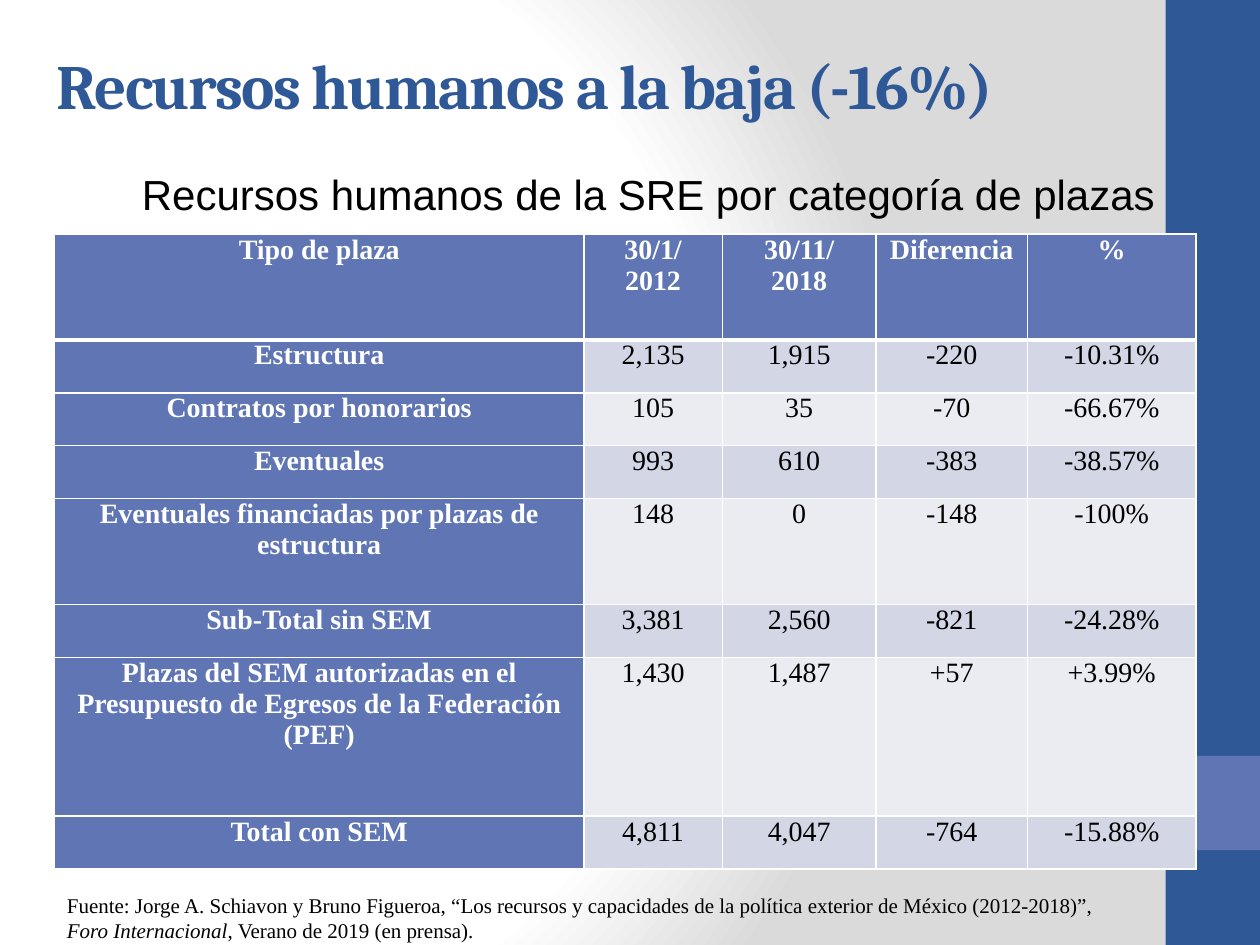
from lxml import etree
from pptx import Presentation
from pptx import util as u
from pptx.dml.color import RGBColor
from pptx.enum import shapes, text
from pptx.oxml import parse_xml
from pptx.oxml.ns import nsdecls, qn

# Content
TITLE = "Recursos humanos a la baja (-16%)"
SUBTITLE = "Recursos humanos de la SRE por categoría de plazas"
HEADER = ["Tipo de plaza", "30/1/\n2012", "30/11/\n2018", "Diferencia", "%"]
ROWS = [
    ("Estructura", "2,135", "1,915", "-220", "-10.31%"),
    ("Contratos por honorarios", "105", "35", "-70", "-66.67%"),
    ("Eventuales", "993", "610", "-383", "-38.57%"),
    ("Eventuales financiadas por plazas de estructura",
     "148", "0", "-148", "-100%"),
    ("Sub-Total sin SEM", "3,381", "2,560", "-821", "-24.28%"),
    ("Plazas del SEM autorizadas en el Presupuesto de Egresos de la "
     "Federación (PEF)", "1,430", "1,487", "+57", "+3.99%"),
    ("Total con SEM", "4,811", "4,047", "-764", "-15.88%"),
]
SOURCE = [
    ("Fuente: Jorge A. Schiavon y Bruno Figueroa, “Los recursos y "
     "capacidades de la política exterior de México (2012-2018)”, ", False),
    ("Foro Internacional", True),
    (", Verano de 2019 (en prensa).", False),
]
COL_WIDTHS = [10.67, 2.79, 3.1, 3.05, 3.4]
ROW_UNITS = [2, 1, 1, 1, 2, 1, 3, 1]
ROW_UNIT = 12.8 / sum(ROW_UNITS)

THEME = {
    "navy": "2F5897", "blue": "6076B4", "bands": ("D2D6E5", "EAECF2"),
    "white": "FFFFFF", "black": "000000", "gray": "DADADA",
    "title": 36, "subtitle": 24, "table": 16, "source": 12,
    "head_font": "Cambria", "sub_font": "Arial",
    "body_font": "Times New Roman",
}


def color(name):
    return RGBColor.from_string(THEME.get(name, name))


def write(tf, content, *, size, font, fill="black", bold=False, align=None,
          anchor=None, spacing=None, line=None, indent=None):
    """Fill a frame with a string (one paragraph per line) or (text, italic) runs."""
    tf.word_wrap = True
    if anchor is not None:
        tf.vertical_anchor = anchor
    if isinstance(content, str):
        paragraphs = [[(t, False)] for t in content.split("\n")]
    else:
        paragraphs = [content]
    for i, runs in enumerate(paragraphs):
        p = tf.add_paragraph() if i else tf.paragraphs[0]
        p.alignment = align
        p.line_spacing = line
        if indent:
            p._p.get_or_add_pPr().set("marL", str(u.Cm(indent)))
        for t, italic in runs:
            r = p.add_run()
            r.text = t
            r.font.size, r.font.name = u.Pt(size), font
            r.font.bold, r.font.italic = bold, italic
            r.font.color.rgb = color(fill)
            if spacing:
                r._r.get_or_add_rPr().set("spc", str(spacing * 100))


def add_text(s, box, content, **fmt):
    sp = s.shapes.add_textbox(*map(u.Cm, box))
    write(sp.text_frame, content, **fmt)


def add_bar(s, box, fill):
    sp = s.shapes.add_shape(shapes.MSO_SHAPE.RECTANGLE, *map(u.Cm, box))
    sp.shadow.inherit = False
    sp.fill.solid()
    sp.fill.fore_color.rgb = color(fill)
    sp.line.fill.background()


def set_borders(cell, **widths):
    tcPr = cell._tc.get_or_add_tcPr()
    for i, side in enumerate("LRTB"):
        ln = etree.Element(qn(f"a:ln{side}"), w=str(u.Pt(widths.get(side, 1))))
        solid = etree.SubElement(ln, qn("a:solidFill"))
        etree.SubElement(solid, qn("a:srgbClr"), val=THEME["white"])
        tcPr.insert(i, ln)


def set_background(s):
    stops = "".join(
        f'<a:gs pos="{pos * 1000}"><a:srgbClr val="{THEME[name]}"/></a:gs>'
        for pos, name in [(0, "white"), (75, "white"), (100, "gray")])
    s._element.cSld.insert(0, parse_xml(
        f'<p:bg {nsdecls("p", "a")}><p:bgPr><a:gradFill rotWithShape="1">'
        f'<a:gsLst>{stops}</a:gsLst><a:path path="circle">'
        '<a:fillToRect l="20000" t="50000" r="100000" b="50000"/></a:path>'
        '</a:gradFill><a:effectLst/></p:bgPr></p:bg>'))


def add_staff_table(s):
    data = [HEADER, *ROWS]
    table = s.shapes.add_table(
        len(data), len(HEADER), u.Cm(1.1), u.Cm(4.72),
        u.Cm(sum(COL_WIDTHS)), u.Cm(ROW_UNIT * sum(ROW_UNITS))).table
    for col, width in zip(table.columns, COL_WIDTHS):
        col.width = u.Cm(width)
    for i, values in enumerate(data):
        table.rows[i].height = u.Cm(ROW_UNIT * ROW_UNITS[i])
        for j, value in enumerate(values):
            cell = table.cell(i, j)
            head = i == 0 or j == 0
            cell.margin_left = cell.margin_right = u.Cm(0.18)
            cell.margin_top = cell.margin_bottom = 0
            cell.fill.solid()
            cell.fill.fore_color.rgb = color(
                "blue" if head else THEME["bands"][(i - 1) % 2])
            set_borders(cell, T=3 if i == 1 else 1, B=3 if i == 0 else 1)
            write(cell.text_frame, value, size=THEME["table"],
                  font=THEME["body_font"], bold=head,
                  fill="white" if head else "black",
                  align=text.PP_ALIGN.CENTER)


def main():
    prs = Presentation()
    prs.slide_width, prs.slide_height = u.Cm(25.4), u.Cm(19.05)
    s = prs.slides.add_slide(prs.slide_layouts[6])
    set_background(s)

    # Side band
    add_bar(s, (23.5, 0, 1.9, 19.05), "navy")
    add_bar(s, (23.5, 15.24, 1.9, 1.9), "blue")

    # Headings
    add_text(s, (0.9, 0.76, 23.93, 1.88), TITLE, size=THEME["title"],
             font=THEME["head_font"], fill="navy", bold=True, spacing=-1,
             anchor=text.MSO_ANCHOR.MIDDLE)
    add_text(s, (1.47, 3.38, 23.34, 13.94), SUBTITLE, size=THEME["subtitle"],
             font=THEME["sub_font"], line=0.9, indent=1.14)

    # Table and source
    add_staff_table(s)
    add_text(s, (1.1, 17.86, 21.41, 1.27), SOURCE, size=THEME["source"],
             font=THEME["body_font"])
    prs.save("out.pptx")


if __name__ == "__main__":
    main()
